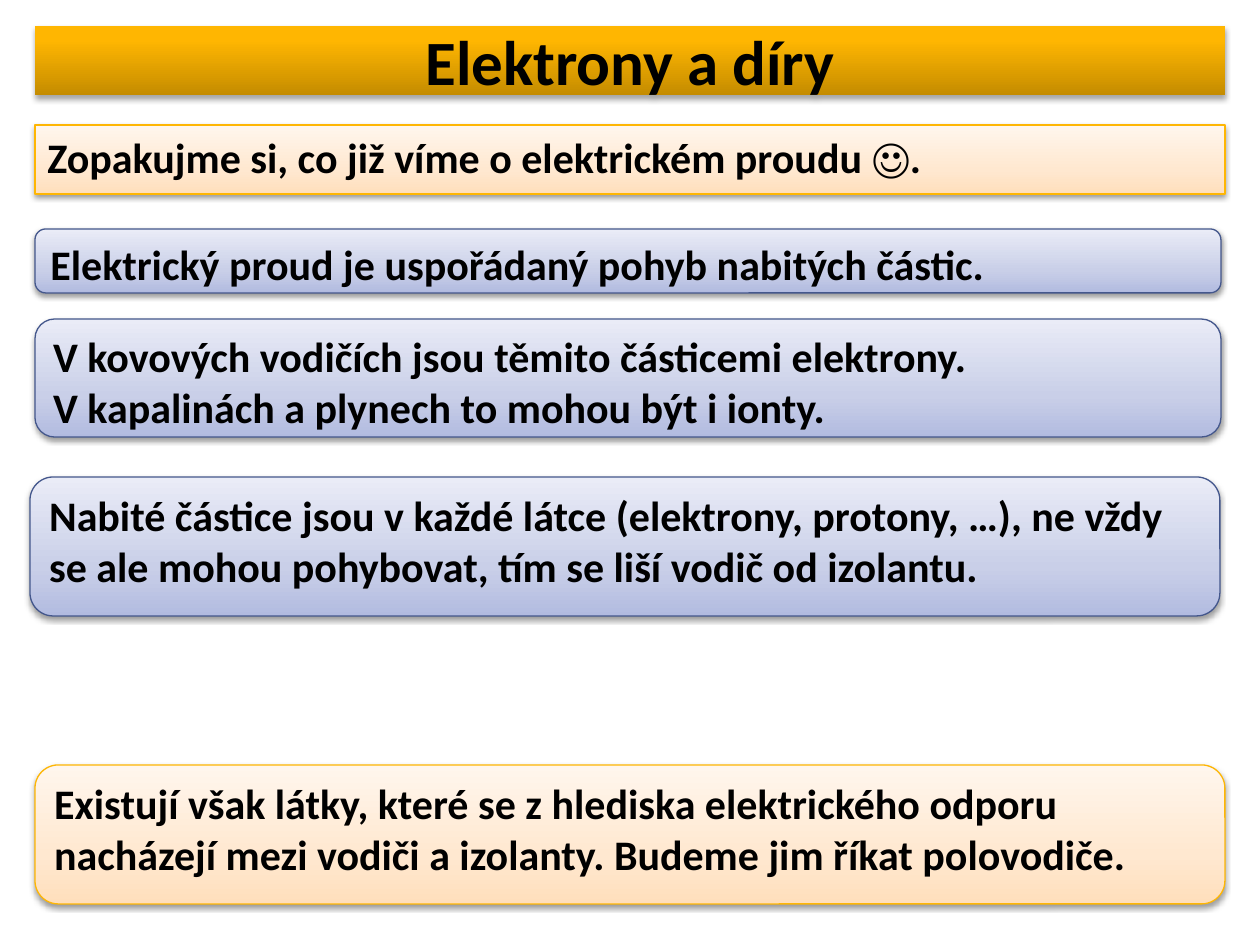
from lxml import etree
from pptx import Presentation
from pptx import util as u
from pptx.dml import color
from pptx.enum import shapes, text
from pptx.oxml import ns

PX = 914400 // 126
SLIDE = (1260, 945)
FONT = "Calibri"

STYLES = {
    "title": {"stops": [(0, "C58C00"), (80, "FFB601"), (100, "FFB602")],
              "line": None, "shadow": (35, 1.8), "size": 36,
              "align": text.PP_ALIGN.CENTER, "anchor": text.MSO_ANCHOR.MIDDLE},
    "orange": {"stops": [(0, "FFDFBC"), (35, "FFE8D0"), (100, "FFF6ED")],
               "line": "FEB604", "shadow": (38, 1.6), "size": 24,
               "align": text.PP_ALIGN.LEFT, "anchor": text.MSO_ANCHOR.TOP},
    "blue": {"stops": [(0, "B2BBE0"), (35, "C9CFE8"), (100, "EAECF7")],
             "line": "44578C", "shadow": (38, 1.6), "size": 24,
             "align": text.PP_ALIGN.LEFT, "anchor": text.MSO_ANCHOR.TOP},
}

RECT = shapes.MSO_SHAPE.RECTANGLE
ROUND = shapes.MSO_SHAPE.ROUNDED_RECTANGLE

BOXES = [
    ("title", RECT, (35, 26, 1190, 69), ["Elektrony a díry"]),
    ("orange", RECT, (35, 125, 1190, 69),
     ["Zopakujme si, co již víme o elektrickém proudu ☺."]),
    ("blue", ROUND, (35, 229, 1186, 64),
     ["Elektrický proud je uspořádaný pohyb nabitých částic."]),
    ("blue", ROUND, (35, 319, 1186, 118),
     ["V kovových vodičích jsou těmito částicemi elektrony.",
      "V kapalinách a plynech to mohou být i ionty."]),
    ("blue", ROUND, (30, 477, 1190, 139),
     ["Nabité částice jsou v každé látce (elektrony, protony, …), ne vždy "
      "se ale mohou pohybovat, tím se liší vodič od izolantu."]),
    ("orange", ROUND, (35, 765, 1190, 139),
     ["Existují však látky, které se z hlediska elektrického odporu "
      "nacházejí mezi vodiči a izolanty. Budeme jim říkat polovodiče."]),
]


def rgb(value):
    return color.RGBColor.from_string(value)


def add_node(parent, tag, **attributes):
    values = {key: str(value) for key, value in attributes.items()}
    return etree.SubElement(parent, ns.qn(tag), values)


def apply_format(target, values):
    for name, value in values.items():
        setattr(target, name, value)


def fill_gradient(shape, stops):
    shape.fill.gradient()
    shape.fill.gradient_angle = 90
    stop_list = shape.element.spPr.find(".//" + ns.qn("a:gsLst"))
    for stop in list(stop_list):
        stop_list.remove(stop)
    for position, value in stops:
        stop = add_node(stop_list, "a:gs", pos=position * 1000)
        add_node(stop, "a:srgbClr", val=value)


def add_shadow(shape, opacity, distance):
    shape.shadow.inherit = False
    effects = shape.element.spPr.find(ns.qn("a:effectLst"))
    shadow = add_node(effects, "a:outerShdw", blurRad=u.Pt(3.1),
                      dist=u.Pt(distance), dir=90 * 60000, rotWithShape=0)
    shade = add_node(shadow, "a:srgbClr", val="000000")
    add_node(shade, "a:alpha", val=opacity * 1000)


def set_text(shape, lines, style):
    frame = shape.text_frame
    apply_format(frame, {"word_wrap": True, "vertical_anchor": style["anchor"]})
    frame.text = "\n".join(lines)
    for paragraph in frame.paragraphs:
        paragraph.alignment = style["align"]
        font = paragraph.runs[0].font
        apply_format(font, {"name": FONT, "size": u.Pt(style["size"]), "bold": True})
        font.color.rgb = rgb("000000")


def add_box(slide, style, kind, place, lines):
    shape = slide.shapes.add_shape(kind, *(value * PX for value in place))
    fill_gradient(shape, style["stops"])
    if style["line"]:
        shape.line.color.rgb = rgb(style["line"])
        shape.line.width = u.Pt(0.75)
    else:
        shape.line.fill.background()
    add_shadow(shape, *style["shadow"])
    set_text(shape, lines, style)


def main():
    presentation = Presentation()
    width, height = (value * PX for value in SLIDE)
    apply_format(presentation, {"slide_width": width, "slide_height": height})
    slide = presentation.slides.add_slide(presentation.slide_layouts[6])
    for style, kind, place, lines in BOXES:
        add_box(slide, STYLES[style], kind, place, lines)
    presentation.save("out.pptx")


if __name__ == "__main__":
    main()
